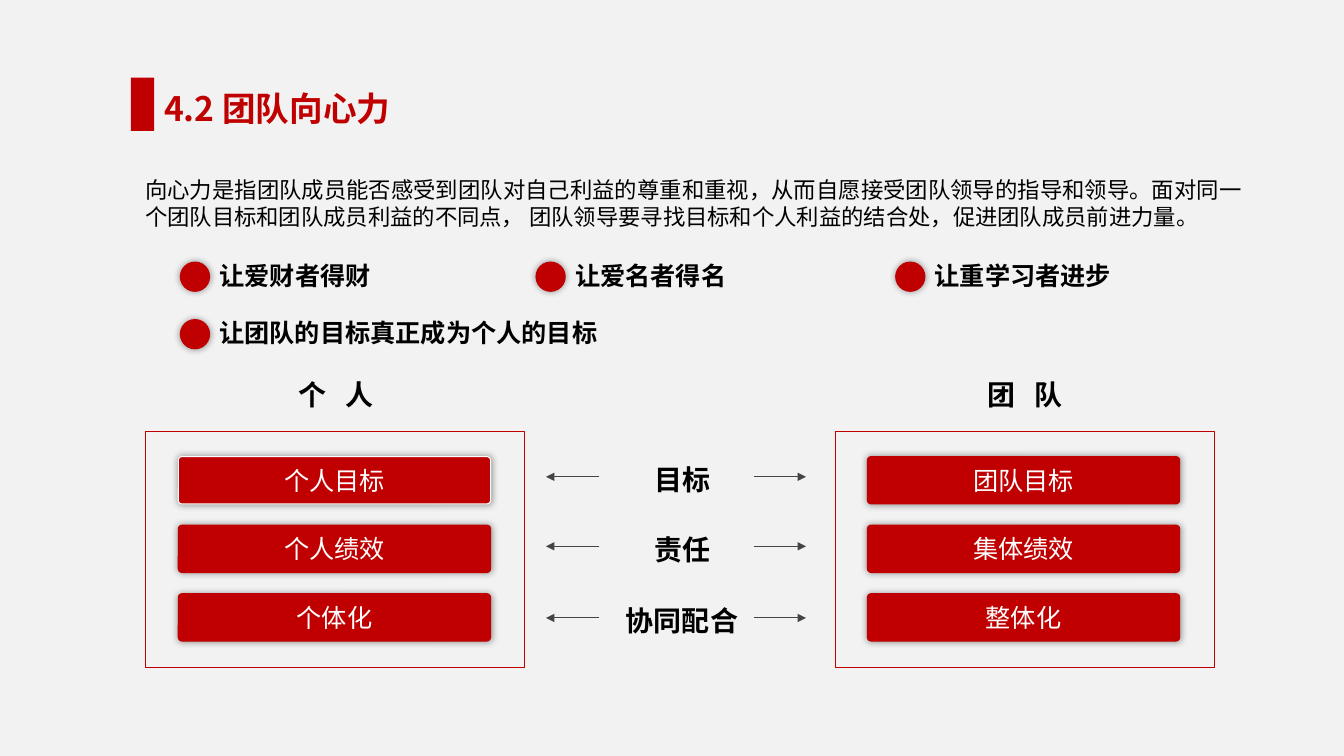
"""Build the slide on team cohesion: four principles and a person/team comparison."""
from dataclasses import dataclass

import pptx
import pptx.dml.color
import pptx.enum.shapes
import pptx.enum.text
import pptx.oxml
import pptx.oxml.ns
import pptx.util

Inches = pptx.util.Inches
Pt = pptx.util.Pt
RGBColor = pptx.dml.color.RGBColor
Align = pptx.enum.text.PP_ALIGN
Anchor = pptx.enum.text.MSO_ANCHOR
Preset = pptx.enum.shapes.MSO_SHAPE
qn = pptx.oxml.ns.qn

RED = RGBColor(0xC0, 0x00, 0x00)
WHITE = RGBColor(0xFF, 0xFF, 0xFF)
BLACK = RGBColor(0x00, 0x00, 0x00)
GREY = RGBColor(0x45, 0x45, 0x45)
PAPER = RGBColor(0xF2, 0xF2, 0xF2)
FONT = "Noto Sans CJK SC"
SHADOW = (
    f'<a:outerShdw {pptx.oxml.ns.nsdecls("a")} blurRad="63500" dist="0" dir="0">'
    '<a:srgbClr val="000000"><a:alpha val="40000"/></a:srgbClr></a:outerShdw>'
)


@dataclass(frozen=True)
class Style:
    size: float
    color: RGBColor = BLACK
    bold: bool = False
    align: Align = Align.LEFT


@dataclass(frozen=True)
class Principle:
    left: float
    top: float
    width: float
    text: str


@dataclass(frozen=True)
class Side:
    heading: str
    frame_left: float
    card_left: float
    cards: tuple[str, ...]


@dataclass(frozen=True)
class Link:
    y: float
    text: str


TITLE = Style(24, RED, True)
INTRO = Style(16, align=Align.JUSTIFY)
PRINCIPLE = Style(18, bold=True)
HEADING = Style(20, bold=True, align=Align.CENTER)
CARD = Style(18, WHITE, align=Align.CENTER)

PRINCIPLES = (
    Principle(1.79, 2.6, 2.55, "让爱财者得财"),
    Principle(5.32, 2.6, 2.55, "让爱名者得名"),
    Principle(8.89, 2.6, 2.55, "让重学习者进步"),
    Principle(1.79, 3.17, 5.96, "让团队的目标真正成为个人的目标"),
)
SIDES = (
    Side("个 人", 1.44, 1.77, ("个人目标", "个人绩效", "个体化")),
    Side("团 队", 8.29, 8.61, ("团队目标", "集体绩效", "整体化")),
)
LINKS = (Link(4.73, "目标"), Link(5.42, "责任"), Link(6.13, "协同配合"))
ARROWS = ((7.48, 8.0), (5.95, 5.42))


def write(frame, text: str, style: Style) -> None:
    """Put one styled paragraph into a text frame."""
    frame.word_wrap = True
    paragraph = frame.paragraphs[0]
    paragraph.text = text
    paragraph.alignment = style.align
    paragraph.space_before = Pt(0)
    font = paragraph.font
    font.size, font.bold, font.name = Pt(style.size), style.bold, FONT
    font.color.rgb = style.color
    east_asian = paragraph._p.pPr.find(qn("a:defRPr")).makeelement(qn("a:ea"), {"typeface": FONT})
    paragraph._p.pPr.find(qn("a:defRPr")).append(east_asian)


def add_label(slide, left: float, top: float, width: float, height: float, text: str, style: Style):
    """Add a text box and return its frame."""
    frame = slide.shapes.add_textbox(Inches(left), Inches(top), Inches(width), Inches(height)).text_frame
    write(frame, text, style)
    return frame


def fill_placeholder(holder, left: float, top: float, width: float, height: float) -> None:
    """Place a placeholder and anchor its text at the top."""
    holder.left, holder.top = Inches(left), Inches(top)
    holder.width, holder.height = Inches(width), Inches(height)
    holder.text_frame.vertical_anchor = Anchor.TOP
    holder.text_frame.auto_size = pptx.enum.text.MSO_AUTO_SIZE.NONE


def add_block(slide, preset: Preset, left: float, top: float, width: float, height: float,
              fill: RGBColor | None = RED, line: RGBColor | None = RED, shadow: bool = False):
    """Add a preset shape with its fill, outline and optional soft shadow."""
    block = slide.shapes.add_shape(preset, Inches(left), Inches(top), Inches(width), Inches(height))
    if fill is None:
        block.fill.background()
    else:
        block.fill.solid()
        block.fill.fore_color.rgb = fill
    if line is None:
        block.line.fill.background()
    else:
        block.line.color.rgb = line
        block.line.width = Pt(0.75)
    block.shadow.inherit = False
    if shadow:
        block._element.spPr.find(qn("a:effectLst")).append(pptx.oxml.parse_xml(SHADOW))
    return block


def add_arrow(slide, start: float, end: float, y: float) -> None:
    """Add a horizontal arrow pointing at its end."""
    arrow = slide.shapes.add_connector(
        pptx.enum.shapes.MSO_CONNECTOR.STRAIGHT, Inches(start), Inches(y), Inches(end), Inches(y))
    arrow.line.color.rgb = GREY
    arrow.line.width = Pt(0.75)
    properties = arrow._element.spPr
    line = properties.find(qn("a:ln"))
    line.append(line.makeelement(qn("a:tailEnd"), {"type": "triangle"}))
    properties.append(properties.makeelement(qn("a:effectLst"), {}))


def add_principle(slide, principle: Principle) -> None:
    """Add a red dot with its statement."""
    add_block(slide, Preset.OVAL, principle.left, principle.top, 0.29, 0.29, shadow=True)
    add_label(slide, principle.left + 0.29, principle.top - 0.07, principle.width, 0.4,
              principle.text, PRINCIPLE)


def add_side(slide, side: Side) -> None:
    """Add a framed column of cards under its spaced heading."""
    add_block(slide, Preset.RECTANGLE, side.frame_left, 4.28, 3.77, 2.34, fill=None)
    heading = add_label(slide, side.card_left + 0.29, 3.7, 2.55, 0.43, side.heading, HEADING)
    heading.paragraphs[0].runs[0]._r.get_or_add_rPr().set("spc", "450")
    for row, text in enumerate(side.cards):
        outline = WHITE if text == "个人目标" else RED
        card = add_block(slide, Preset.ROUNDED_RECTANGLE, side.card_left, 4.53 + 0.68 * row,
                         3.1, 0.47, line=outline, shadow=True)
        card.adjustments[0] = 0.08
        card.text_frame.vertical_anchor = Anchor.MIDDLE
        write(card.text_frame, text, CARD)


def add_link(slide, link: Link) -> None:
    """Add a central term with an arrow to each side."""
    width = len(link.text) * HEADING.size / 72 + 0.2
    label = add_label(slide, 6.77 - width / 2, link.y - 0.19, width, 0.43, link.text, HEADING)
    label.word_wrap = False
    for start, end in ARROWS:
        add_arrow(slide, start, end, link.y)


def main() -> None:
    """Create and save the presentation."""
    deck = pptx.Presentation()
    deck.slide_width, deck.slide_height = Inches(13.34), Inches(7.5)
    slide = deck.slides.add_slide(deck.slide_layouts[1])
    slide.background.fill.solid()
    slide.background.fill.fore_color.rgb = PAPER

    title, intro = slide.placeholders
    fill_placeholder(title, 1.53, 0.82, 5.12, 0.5)
    write(title.text_frame, "4.2 团队向心力", TITLE)
    add_block(slide, Preset.RECTANGLE, 1.3, 0.77, 0.23, 0.53, line=None)

    fill_placeholder(intro, 1.34, 1.7, 11.1, 0.63)
    layout = intro.text_frame.paragraphs[0]._p.get_or_add_pPr()
    layout.set("marL", "0")
    layout.set("indent", "0")
    layout.append(layout.makeelement(qn("a:buNone"), {}))
    write(intro.text_frame, "向心力是指团队成员能否感受到团队对自己利益的尊重和重视，从而自愿接受团队领导的指导和领导。"
          "面对同一个团队目标和团队成员利益的不同点， 团队领导要寻找目标和个人利益的结合处，促进团队成员前进力量。", INTRO)

    for principle in PRINCIPLES:
        add_principle(slide, principle)
    for side in SIDES:
        add_side(slide, side)
    for link in LINKS:
        add_link(slide, link)
    deck.save("out.pptx")


if __name__ == "__main__":
    main()
